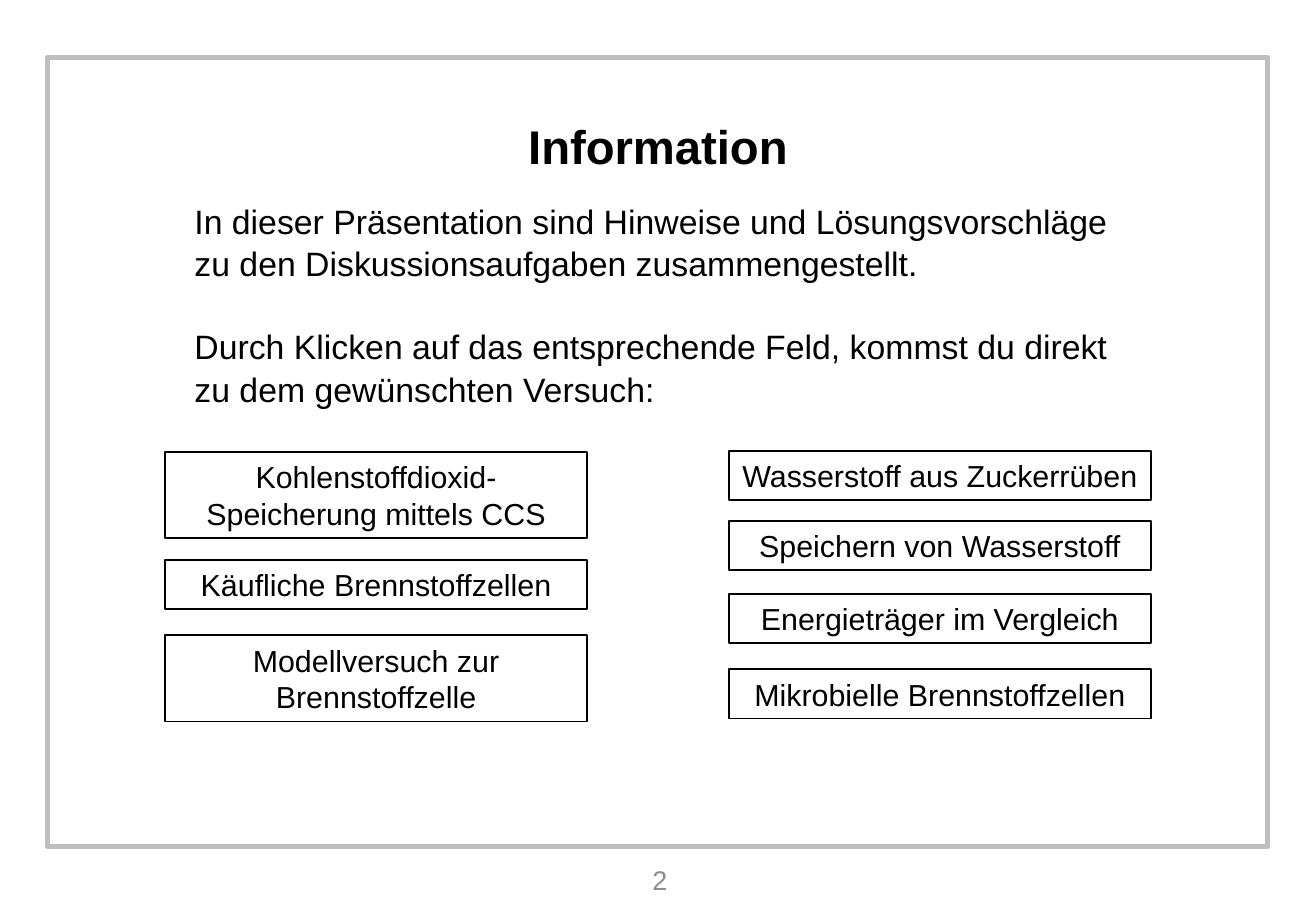
from dataclasses import dataclass

from pptx import Presentation
from pptx.dml.color import RGBColor
from pptx.enum.shapes import MSO_SHAPE
from pptx.enum.text import MSO_ANCHOR, MSO_AUTO_SIZE, PP_ALIGN
from pptx.oxml.xmlchemy import OxmlElement
from pptx.util import Inches, Pt

RECTANGLE = MSO_SHAPE.RECTANGLE
MIDDLE = MSO_ANCHOR.MIDDLE
NO_AUTOFIT = MSO_AUTO_SIZE.NONE
LEFT, CENTER = PP_ALIGN.LEFT, PP_ALIGN.CENTER

BLACK = RGBColor(0x00, 0x00, 0x00)
WHITE = RGBColor(0xFF, 0xFF, 0xFF)
FRAME_GRAY = RGBColor(0xBF, 0xBF, 0xBF)
NUMBER_GRAY = RGBColor(0x8C, 0x8C, 0x8C)

WIDTH, HEIGHT = Inches(10.83), Inches(7.5)
FONT = "Arial"


@dataclass
class Area:
    """Position and size in percent of the slide."""
    left: float
    top: float
    width: float
    height: float

    def lengths(self) -> tuple[int, int, int, int]:
        return (int(WIDTH * self.left / 100), int(HEIGHT * self.top / 100),
                int(WIDTH * self.width / 100), int(HEIGHT * self.height / 100))


@dataclass
class Topic:
    label: str
    column: float
    top: float
    height: float


# Columns and heights of the topic fields, in percent
LEFT_COLUMN, RIGHT_COLUMN, COLUMN_WIDTH = 12.56, 55.4, 32.04
ONE_LINE, TWO_LINES = 5.4, 9.47

TOPICS = [
    Topic("Kohlenstoffdioxid-Speicherung mittels CCS", LEFT_COLUMN, 49.6, TWO_LINES),
    Topic("Käufliche Brennstoffzellen", LEFT_COLUMN, 61.47, ONE_LINE),
    Topic("Modellversuch zur Brennstoffzelle", LEFT_COLUMN, 69.73, TWO_LINES),
    Topic("Wasserstoff aus Zuckerrüben", RIGHT_COLUMN, 49.47, ONE_LINE),
    Topic("Speichern von Wasserstoff", RIGHT_COLUMN, 57.2, ONE_LINE),
    Topic("Energieträger im Vergleich", RIGHT_COLUMN, 65.2, ONE_LINE),
    Topic("Mikrobielle Brennstoffzellen", RIGHT_COLUMN, 73.47, ONE_LINE),
]

INTRODUCTION = [
    "In dieser Präsentation sind Hinweise und Lösungsvorschläge "
    "zu den Diskussionsaufgaben zusammengestellt.",
    "Durch Klicken auf das entsprechende Feld, kommst du direkt "
    "zu dem gewünschten Versuch:",
]


def write(shape, *texts: str, size: float, color: RGBColor = BLACK,
          bold: bool = False, align: PP_ALIGN = CENTER,
          gap: float = 0, spacing: float = 1.0, inset: float = 0.1) -> None:
    """Fill a shape with plain paragraphs, separated by a gap in points."""
    frame = shape.text_frame
    frame.word_wrap = True
    frame.auto_size = NO_AUTOFIT
    frame.vertical_anchor = MIDDLE
    frame.margin_left = frame.margin_right = Inches(inset)
    for index, text in enumerate(texts):
        paragraph = frame.paragraphs[0] if index == 0 else frame.add_paragraph()
        paragraph.text = text
        properties = paragraph._p.get_or_add_pPr()
        properties.set("marL", "0")
        properties.set("indent", "0")
        properties.append(OxmlElement("a:buNone"))
        paragraph.alignment = align
        paragraph.line_spacing = spacing
        paragraph.space_before = Pt(gap if index else 0)
        for run in paragraph.runs:
            run.font.name = FONT
            run.font.size = Pt(size)
            run.font.bold = bold
            run.font.color.rgb = color


def place(placeholder, area: Area) -> None:
    (placeholder.left, placeholder.top,
     placeholder.width, placeholder.height) = area.lengths()


def add_rectangle(slide, area: Area, line: RGBColor, weight: float,
                  fill: RGBColor | None = None):
    rectangle = slide.shapes.add_shape(RECTANGLE, *area.lengths())
    rectangle.shadow.inherit = False
    if fill is None:
        rectangle.fill.background()
    else:
        rectangle.fill.solid()
        rectangle.fill.fore_color.rgb = fill
    rectangle.line.color.rgb = line
    rectangle.line.width = Pt(weight)
    return rectangle


def main() -> None:
    presentation = Presentation()
    presentation.slide_width, presentation.slide_height = WIDTH, HEIGHT
    slide = presentation.slides.add_slide(presentation.slide_layouts[1])

    # Frame around the content
    add_rectangle(slide, Area(3.6, 6.27, 92.71, 86.67), FRAME_GRAY, 3)

    # Heading and introduction
    heading, introduction = slide.placeholders
    place(heading, Area(7.29, 9.47, 85.41, 13.07))
    write(heading, "Information", size=28, bold=True)
    place(introduction, Area(13.85, 20.93, 72.67, 24.8))
    write(introduction, *INTRODUCTION, size=20, align=LEFT, gap=24, spacing=1.05)

    # Topic fields
    for topic in TOPICS:
        area = Area(topic.column, topic.top, COLUMN_WIDTH, topic.height)
        field = add_rectangle(slide, area, BLACK, 1, WHITE)
        write(field, topic.label, size=18, inset=0.08)

    # Page number
    page_number = slide.shapes.add_textbox(*Area(38.87, 94, 22.53, 5.2).lengths())
    write(page_number, "2", size=16, color=NUMBER_GRAY)

    presentation.save("out.pptx")


if __name__ == "__main__":
    main()
